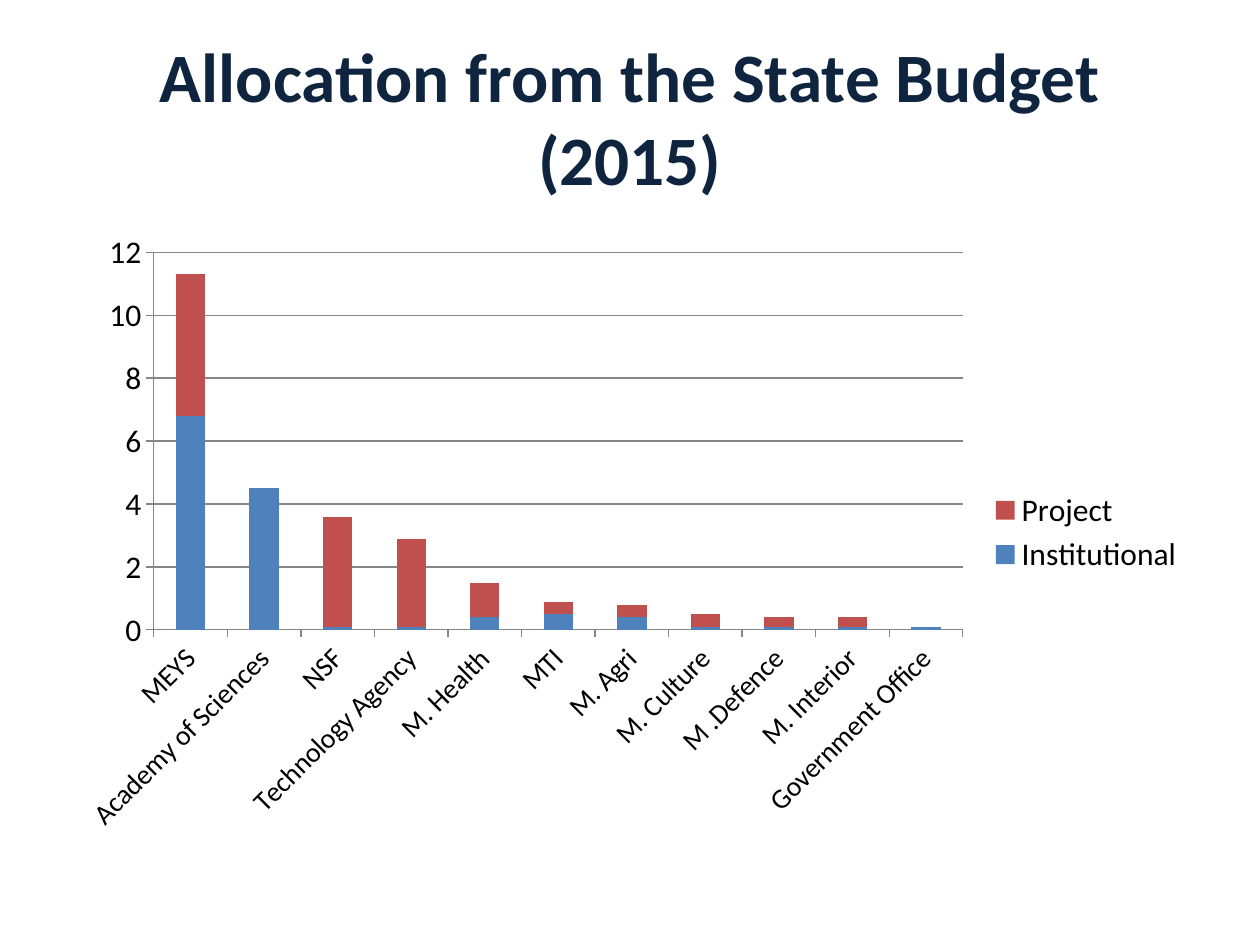
from dataclasses import dataclass

from pptx import Presentation
from pptx.chart.data import CategoryChartData
from pptx.dml.color import RGBColor
from pptx.enum.chart import XL_CHART_TYPE, XL_LEGEND_POSITION, XL_TICK_MARK
from pptx.enum.text import MSO_ANCHOR, PP_ALIGN
from pptx.util import Cm, Pt


@dataclass(frozen=True)
class Theme:
    font: str = "Calibri"
    title: str = "0F243E"
    text: str = "000000"
    line: str = "868686"
    series: tuple = ("4F81BD", "C0504D")
    title_size: float = 39.6
    chart_size: float = 18
    category_size: float = 16


theme = Theme()


def add_text(s, text, left, top, width, height, *, size, color, bold=False,
             align=PP_ALIGN.LEFT, anchor=MSO_ANCHOR.TOP):
    tf = s.shapes.add_textbox(Cm(left), Cm(top), Cm(width), Cm(height)).text_frame
    tf.word_wrap = True
    tf.vertical_anchor = anchor
    p = tf.paragraphs[0]
    p.alignment = align
    r = p.add_run()
    r.text = text
    r.font.name = theme.font
    r.font.size = Pt(size)
    r.font.bold = bold
    r.font.color.rgb = RGBColor.from_string(color)


prs = Presentation()
prs.slide_width, prs.slide_height = Cm(25.4), Cm(19.05)
s = prs.slides.add_slide(prs.slide_layouts[6])

# Title
add_text(s, "Allocation from the State Budget (2015)", 1.27, 0.76, 22.86, 3.18,
         size=theme.title_size, color=theme.title, bold=True,
         align=PP_ALIGN.CENTER, anchor=MSO_ANCHOR.MIDDLE)

# Budget by provider: institutional and project funding
budget = [
    ("MEYS", 6.8, 4.5),
    ("Academy of Sciences", 4.5, 0),
    ("NSF", 0.1, 3.5),
    ("Technology Agency", 0.1, 2.8),
    ("M. Health", 0.4, 1.1),
    ("MTI", 0.5, 0.4),
    ("M. Agri", 0.4, 0.4),
    ("M. Culture", 0.1, 0.4),
    ("M .Defence", 0.1, 0.3),
    ("M. Interior", 0.1, 0.3),
    ("Government Office", 0.1, 0),
]
providers, institutional, project = zip(*budget)
data = CategoryChartData()
data.categories = providers
data.add_series("Institutional", institutional)
data.add_series("Project", project)

# Stacked column chart
chart = s.shapes.add_chart(XL_CHART_TYPE.COLUMN_STACKED, Cm(1.27), Cm(4.45),
                           Cm(22.86), Cm(12.57), data).chart
chart.has_title = False
chart.font.name = theme.font
chart.font.size = Pt(theme.chart_size)
chart.font.color.rgb = RGBColor.from_string(theme.text)
plot = chart.plots[0]
plot.vary_by_categories = False
plot.gap_width = 150
plot.overlap = 100
for series, color in zip(plot.series, theme.series):
    series.format.fill.solid()
    series.format.fill.fore_color.rgb = RGBColor.from_string(color)

# Axes
cat_axis, val_axis = chart.category_axis, chart.value_axis
val_axis.minimum_scale, val_axis.maximum_scale, val_axis.major_unit = 0, 12, 2
val_axis.has_major_gridlines = True
for axis in (cat_axis, val_axis):
    axis.major_tick_mark = XL_TICK_MARK.OUTSIDE
for part in (cat_axis, val_axis, val_axis.major_gridlines):
    part.format.line.color.rgb = RGBColor.from_string(theme.line)
    part.format.line.width = Pt(0.75)
cat_axis.tick_labels.font.size = Pt(theme.category_size)
label_body = chart.element.xpath(".//c:catAx/c:txPr/a:bodyPr")[0]
label_body.set("rot", str(-45 * 60000))

# Legend
chart.has_legend = True
chart.legend.position = XL_LEGEND_POSITION.RIGHT
chart.legend.include_in_layout = False

prs.save("out.pptx")
